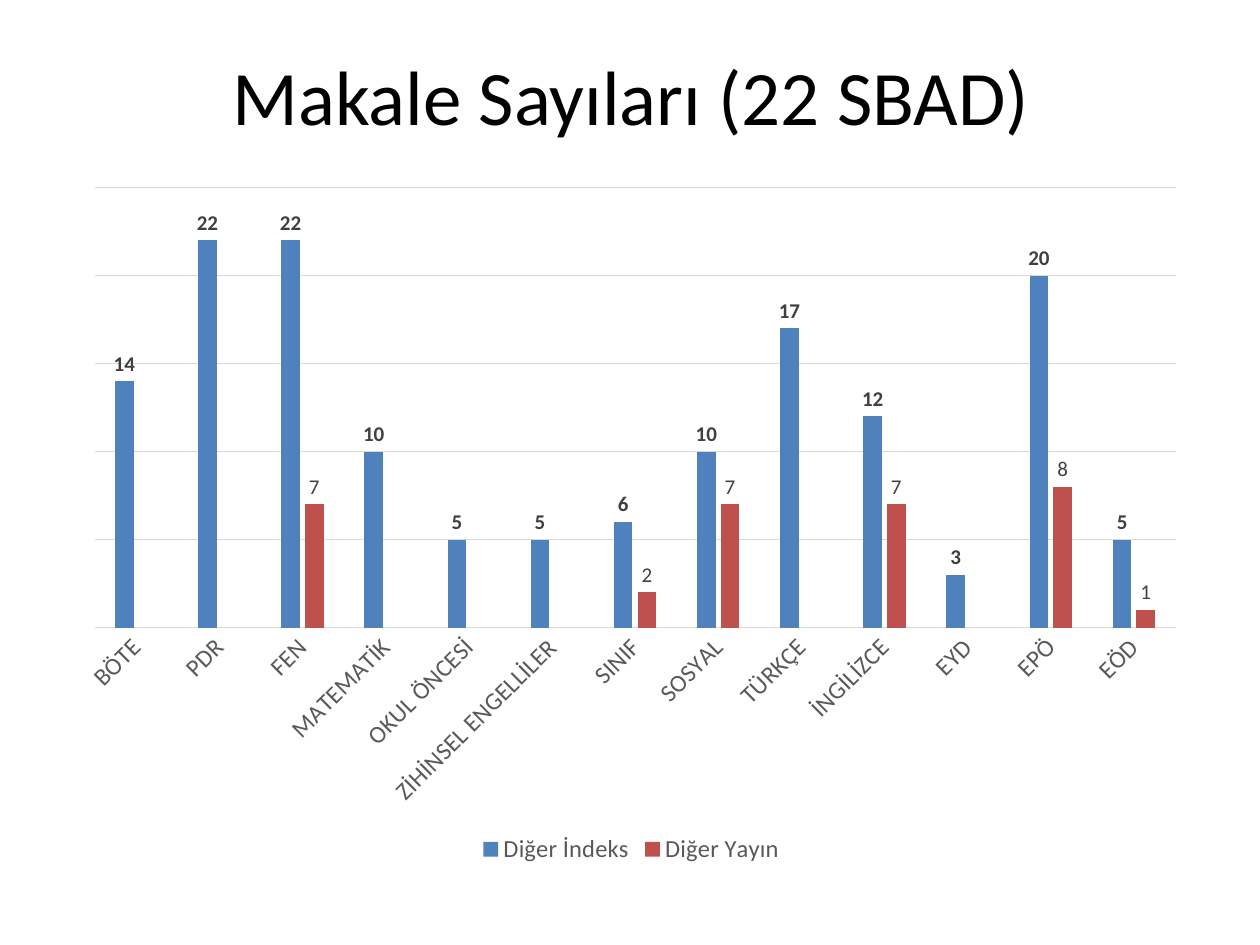
from dataclasses import dataclass, field

from pptx import Presentation
from pptx.chart.data import CategoryChartData
from pptx.dml.color import RGBColor
from pptx.enum.chart import XL_CHART_TYPE, XL_LABEL_POSITION, XL_LEGEND_POSITION, XL_TICK_MARK
from pptx.enum.text import MSO_ANCHOR, PP_ALIGN
from pptx.util import Inches, Pt

COLORS = {
    "title": "000000",
    "axis_text": "595959",
    "label": "404040",
    "grid": "D9D9D9",
    "index": "4F81BD",
    "other": "C0504D",
}

# Article counts: department -> (other index, other publication)
ARTICLES = {
    "BÖTE": (14, None),
    "PDR": (22, None),
    "FEN": (22, 7),
    "MATEMATİK": (10, None),
    "OKUL ÖNCESİ": (5, None),
    "ZİHİNSEL ENGELLİLER": (5, None),
    "SINIF": (6, 2),
    "SOSYAL": (10, 7),
    "TÜRKÇE": (17, None),
    "İNGİLİZCE": (12, 7),
    "EYD": (3, None),
    "EPÖ": (20, 8),
    "EÖD": (5, 1),
}
# Series name, colour key, bold labels
SERIES = [("Diğer İndeks", "index", True), ("Diğer Yayın", "other", False)]


def rgb(key):
    return RGBColor.from_string(COLORS[key])


def style_font(font, size, color, bold=False, name="Calibri"):
    font.name = name
    font.size = Pt(size)
    font.bold = bold
    font.color.rgb = rgb(color)


def write_text(frame, text, *, size, color, align=PP_ALIGN.LEFT, anchor=MSO_ANCHOR.TOP):
    frame.word_wrap = True
    frame.vertical_anchor = anchor
    paragraph = frame.paragraphs[0]
    paragraph.alignment = align
    run = paragraph.add_run()
    run.text = text
    style_font(run.font, size, color)


def style_line(line, color):
    line.color.rgb = rgb(color)
    line.width = Pt(0.75)


@dataclass
class SlideBuilder:
    deck: object = field(default_factory=Presentation)
    slide: object = None

    def start(self, width, height):
        self.deck.slide_width, self.deck.slide_height = Inches(width), Inches(height)
        self.slide = self.deck.slides.add_slide(self.deck.slide_layouts[6])

    def area(self, left, top, width, height):
        """Turn shares of the slide's size into lengths."""
        across, down = self.deck.slide_width, self.deck.slide_height
        return int(left * across), int(top * down), int(width * across), int(height * down)

    def title(self, text, *shares):
        box = self.slide.shapes.add_textbox(*self.area(*shares))
        write_text(box.text_frame, text, size=44, color="title",
                   align=PP_ALIGN.CENTER, anchor=MSO_ANCHOR.MIDDLE)

    def column_chart(self, counts, series, *shares):
        data = CategoryChartData()
        data.categories = list(counts)
        for (name, _, _), values in zip(series, zip(*counts.values())):
            data.add_series(name, values)
        chart = self.slide.shapes.add_chart(
            XL_CHART_TYPE.COLUMN_CLUSTERED, *self.area(*shares), data).chart
        style_font(chart.font, 10, "title")
        chart.has_title = False

        # Columns and their values
        plot = chart.plots[0]
        plot.gap_width, plot.overlap, plot.vary_by_categories = 219, -27, False
        for columns, (_, color, bold) in zip(plot.series, series):
            columns.format.fill.solid()
            columns.format.fill.fore_color.rgb = rgb(color)
            columns.invert_if_negative = False
            labels = columns.data_labels
            labels.show_value = True
            labels.position = XL_LABEL_POSITION.OUTSIDE_END
            style_font(labels.font, 12, "label", bold)

        # Departments, slanted under the columns
        departments = chart.category_axis
        departments.major_tick_mark = departments.minor_tick_mark = XL_TICK_MARK.NONE
        style_font(departments.tick_labels.font, 14, "axis_text")
        departments._element.txPr.bodyPr.set("rot", "-2700000")
        style_line(departments.format.line, "grid")

        # Hidden value scale with gridlines
        scale = chart.value_axis
        scale.minimum_scale, scale.maximum_scale, scale.major_unit = 0, 25, 5
        scale.has_major_gridlines = True
        style_line(scale.major_gridlines.format.line, "grid")
        scale.visible = False

        # Legend
        chart.has_legend = True
        chart.legend.position = XL_LEGEND_POSITION.BOTTOM
        chart.legend.include_in_layout = False
        style_font(chart.legend.font, 14, "axis_text")


def main():
    builder = SlideBuilder()
    builder.start(10, 7.5)
    left, width = 0.51 / 10, 0.9
    builder.title("Makale Sayıları (22 SBAD)", left, 0.13 / 7.5, width, 1.25 / 7.5)
    builder.column_chart(ARTICLES, SERIES, left, 1.38 / 7.5, width, 5.52 / 7.5)
    builder.deck.save("out.pptx")


if __name__ == "__main__":
    main()
